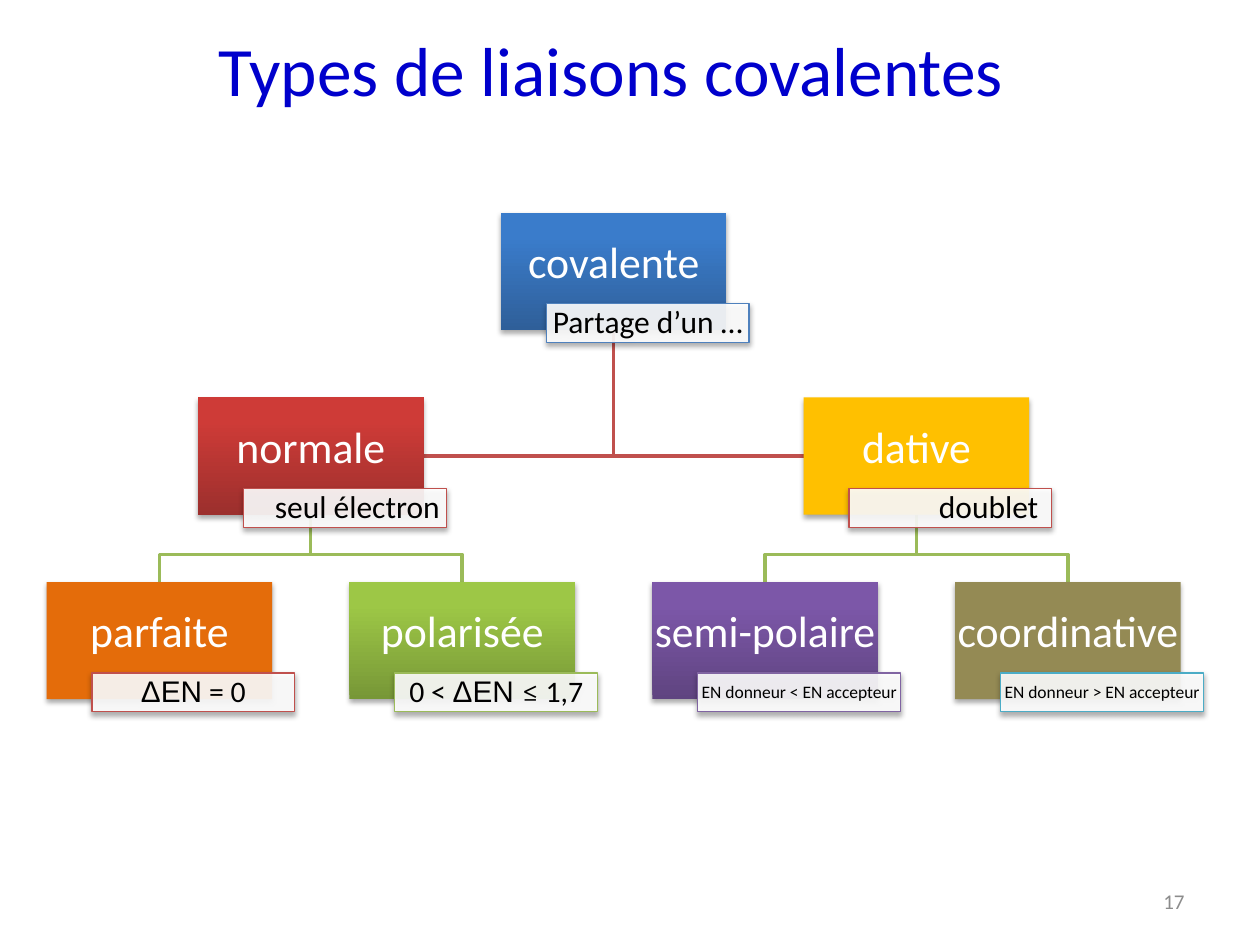
from lxml import etree
from pptx import Presentation
from pptx import util as u
from pptx.dml.color import RGBColor
from pptx.enum import shapes, text
from pptx.oxml import ns

HUES = {
    "title": "0000CC", "page": "8C8C8C", "white": "FFFFFF", "black": "000000",
    "blue": "4F81BD", "red": "C0504D", "green": "9BBB59",
    "violet": "8064A2", "aqua": "4BACC6",
}
FACES = {
    "blue": ("2F5F99", "3A7CCB"), "red": ("9C2F2D", "CE3B37"),
    "green": ("779737", "9DC746"), "violet": ("5F4480", "7C57A8"),
    "orange": ("E46C0A",), "gold": ("FFC000",), "olive": ("948A54",),
}
WIDE, HIGH = 1.79, 0.93
LEFT, TOP = 0.37, 1.69
STEP, DROP = 7.21 / 3, 1.465
MID, END = text.PP_ALIGN.CENTER, text.PP_ALIGN.RIGHT
SANS = "Calibri"

NODES = [
    (1.5, 0, "covalente", "blue", "blue", END, 18, [("Partage d’un …", SANS)]),
    (0.5, 1, "normale", "red", "red", END, 18, [("seul électron", SANS)]),
    (0, 2, "parfaite", "orange", "red", MID, 17, [("ΔΕΝ", "Arial"), (" = 0", SANS)]),
    (1, 2, "polarisée", "green", "green", MID, 17,
     [("0 < ", SANS), ("ΔΕΝ ", "Arial"), ("≤", "Cambria"), (" 1,7", SANS)]),
    (2.5, 1, "dative", "gold", "red", END, 18, [("doublet ", SANS)]),
    (2, 2, "semi-polaire", "violet", "violet", END, 10,
     [("EN donneur < EN accepteur", SANS)]),
    (3, 2, "coordinative", "olive", "aqua", END, 10,
     [("EN donneur > EN accepteur", SANS)]),
]


def rgb(code):
    return RGBColor.from_string(code)


def spot(col, row):
    return LEFT + col * STEP, TOP + row * DROP


def write(shape, runs, size, hue, align, pads, gap=None):
    frame = shape.text_frame
    frame.word_wrap = True
    frame.vertical_anchor = text.MSO_ANCHOR.MIDDLE
    (frame.margin_left, frame.margin_top,
     frame.margin_right, frame.margin_bottom) = [u.Inches(p) for p in pads]
    para = frame.paragraphs[0]
    para.alignment = align
    para.line_spacing = gap
    for words, face in runs:
        run = para.add_run()
        run.text = words
        run.font.name = face
        run.font.size = u.Pt(size)
        run.font.color.rgb = rgb(HUES[hue])


def shade(shape):
    shape.shadow.inherit = False
    list_tag = shape.fill._xPr.find(ns.qn("a:effectLst"))
    cast = etree.SubElement(list_tag, ns.qn("a:outerShdw"), blurRad=str(u.Pt(3.1)),
                            dist=str(u.Pt(1.8)), dir="5400000", rotWithShape="0")
    tone = etree.SubElement(cast, ns.qn("a:srgbClr"), val=HUES["black"])
    etree.SubElement(tone, ns.qn("a:alpha"), val="35000")


def rect(slide, x, y, wide, high):
    shape = slide.shapes.add_shape(shapes.MSO_SHAPE.RECTANGLE, u.Inches(x),
                                   u.Inches(y), u.Inches(wide), u.Inches(high))
    shade(shape)
    return shape


def paint(shape, face):
    if len(face) == 1:
        shape.fill.solid()
        shape.fill.fore_color.rgb = rgb(face[0])
        return
    shape.fill.gradient()
    shape.fill.gradient_angle = 90
    for stop, code, place in zip(shape.fill.gradient_stops, face, (0, 0.8)):
        stop.color.rgb = rgb(code)
        stop.position = place


def add_node(slide, col, row, name, face, edge, align, size, runs):
    x, y = spot(col, row)
    box = rect(slide, x, y, WIDE, HIGH)
    paint(box, FACES[face])
    box.line.fill.background()
    write(box, [(name, SANS)], 25, "white", MID, (0, 0.02, 0, 0.13), 0.9)

    note = rect(slide, x + 0.36, y + 0.72, 1.61, 0.31)
    paint(note, (HUES["white"],))
    tone = note.fill._xPr.find(ns.qn("a:solidFill"))[0]
    etree.SubElement(tone, ns.qn("a:alpha"), val="90000")
    note.line.color.rgb = rgb(HUES[edge])
    note.line.width = u.Pt(0.75)
    side = 0.03 if size == 10 else 0.05
    near = 0 if align == END else side
    write(note, runs, size, "black", align, (near, 0.01, side, 0.01), 0.9)


def add_link(slide, points, hue):
    spots = [(u.Inches(x), u.Inches(y)) for x, y in points]
    pen = slide.shapes.build_freeform(*spots[0])
    pen.add_line_segments(spots[1:], close=False)
    link = pen.convert_to_shape()
    link.shadow.inherit = False
    link.fill.background()
    link.line.color.rgb = rgb(HUES[hue])
    link.line.width = u.Pt(2)


def add_links(slide):
    x, y = spot(1.5, 0)
    stem = x + WIDE / 2
    for col, reach in ((2.5, 0), (0.5, WIDE)):
        side, top = spot(col, 1)
        mid = top + HIGH / 2
        add_link(slide, [(stem, y + HIGH), (stem, mid), (side + reach, mid)], "red")
        fork, base = side + WIDE / 2, top + HIGH
        for kid in (col + 0.5, col - 0.5):
            left, end = spot(kid, 2)
            tip, bend = left + WIDE / 2, end - 0.22
            add_link(slide, [(fork, base), (fork, bend), (tip, bend), (tip, end)],
                     "green")


def add_text(slide, place, words, size, hue, align):
    box = slide.shapes.add_textbox(*[u.Inches(n) for n in place])
    write(box, [(words, SANS)], size, hue, align, (0.1, 0.05, 0.1, 0.05))


def main():
    deck = Presentation()
    deck.slide_width, deck.slide_height = u.Inches(10), u.Inches(7.5)
    slide = deck.slides.add_slide(deck.slide_layouts[6])
    add_text(slide, (1.39, 0.21, 6.92, 0.67), "Types de liaisons covalentes",
             39.6, "title", MID)
    add_links(slide)
    for node in NODES:
        add_node(slide, *node)
    add_text(slide, (7.17, 6.95, 2.33, 0.4), "17", 12, "page", END)
    deck.save("out.pptx")


if __name__ == "__main__":
    main()
